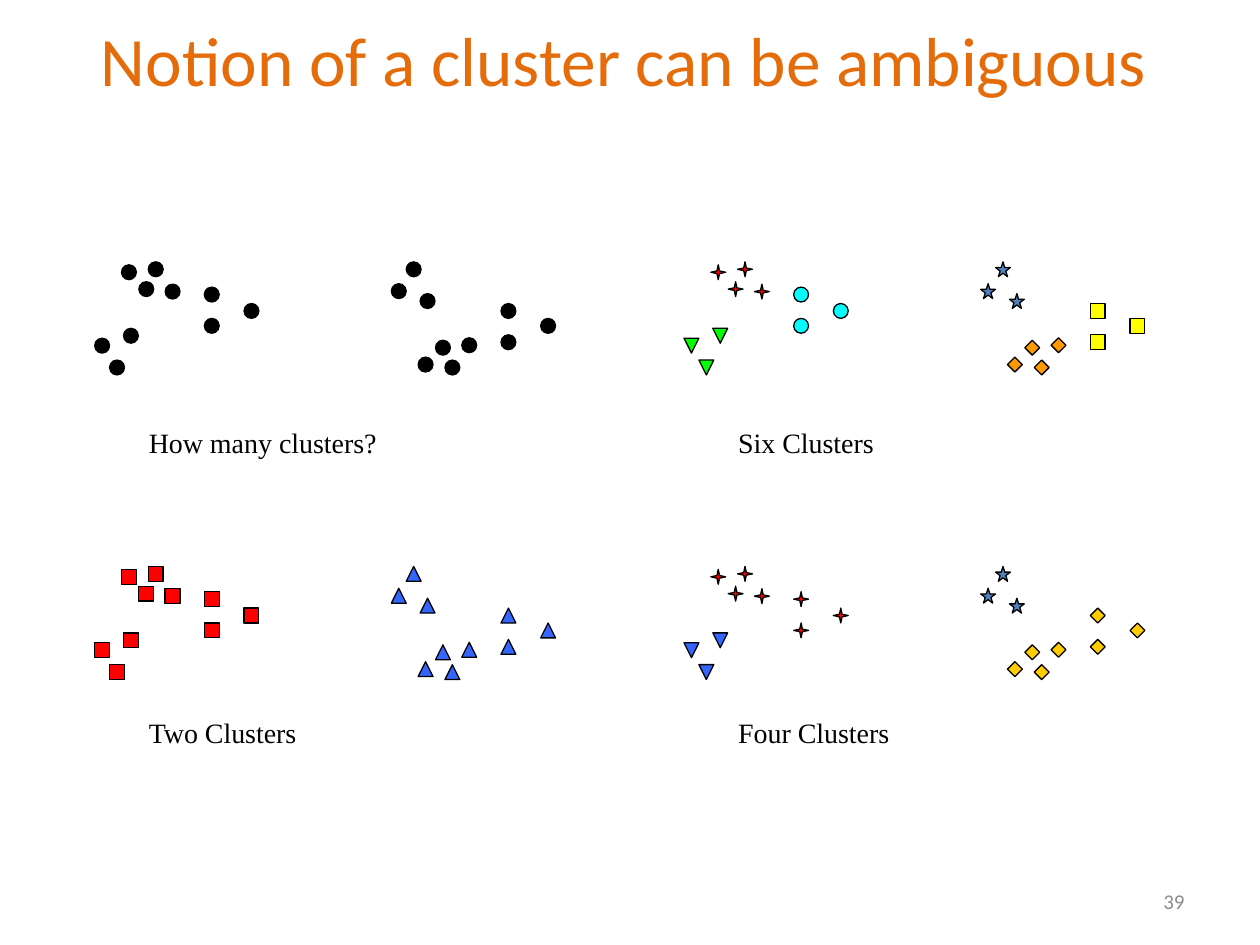
from pptx import Presentation
from pptx.dml.color import RGBColor
from pptx.enum import shapes, text
from pptx.util import Cm, Pt

BLACK = RGBColor(0x00, 0x00, 0x00)
RED = RGBColor(0xFF, 0x00, 0x00)
BLUE = RGBColor(0x33, 0x66, 0xFF)
STEEL = RGBColor(0x4F, 0x81, 0xBD)
GREEN = RGBColor(0x00, 0xFF, 0x00)
CYAN = RGBColor(0x00, 0xFF, 0xFF)
YELLOW = RGBColor(0xFF, 0xFF, 0x00)
GOLD = RGBColor(0xFF, 0xCC, 0x00)
AMBER = RGBColor(0xFF, 0x99, 0x00)
TITLE_ORANGE = RGBColor(0xE4, 0x6C, 0x0A)
GREY = RGBColor(0x8C, 0x8C, 0x8C)

MSO = shapes.MSO_SHAPE
DOT = (MSO.OVAL, BLACK)
RED_SQUARE = (MSO.RECTANGLE, RED)
BLUE_TRIANGLE = (MSO.ISOSCELES_TRIANGLE, BLUE)
RED_CROSS = (MSO.STAR_4_POINT, RED)
STEEL_STAR = (MSO.STAR_5_POINT, STEEL)
GOLD_DIAMOND = (MSO.DIAMOND, GOLD)

MARK = 0.3
CLOUD_HEIGHT = 1.98
CLOUD_SHIFT = 5.98
UPPER = [(1.42, 0.45), (0.54, 0.06), (1.08, 0), (0.89, 0.4)]
LOWER = [(0.58, 1.34), (0, 1.54), (0.3, CLOUD_HEIGHT)]
SIDE = [(2.21, 0.51), (3.01, 0.84), (2.21, 1.14)]
CLUSTERS = [UPPER, LOWER, SIDE]

COLUMNS = [1.91, 13.79]
ROWS = [5.28, 11.42]
CAPTION_TOPS = [8.46, 14.3]
PANELS = [
    (0, 0, "How many clusters?", [DOT] * 3, [DOT] * 3),
    (1, 1, "Four Clusters",
     [RED_CROSS, (MSO.FLOWCHART_EXTRACT, BLUE), RED_CROSS],
     [GOLD_DIAMOND, STEEL_STAR, GOLD_DIAMOND]),
    (0, 1, "Two Clusters", [RED_SQUARE] * 3, [BLUE_TRIANGLE] * 3),
    (1, 0, "Six Clusters",
     [RED_CROSS, (MSO.ISOSCELES_TRIANGLE, GREEN), (MSO.OVAL, CYAN)],
     [(MSO.DIAMOND, AMBER), STEEL_STAR, (MSO.RECTANGLE, YELLOW)]),
]


def add_text(parent, left, top, width, height, words, font, size, color,
             align=text.PP_ALIGN.LEFT, anchor=text.MSO_ANCHOR.TOP):
    sp = parent.add_textbox(Cm(left), Cm(top), Cm(width), Cm(height))
    tf = sp.text_frame
    tf.word_wrap = True
    tf.vertical_anchor = anchor
    p = tf.paragraphs[0]
    p.text = words
    p.alignment = align
    p.font.name = font
    p.font.size = Pt(size)
    p.font.color.rgb = color


def add_mark(parent, left, top, kind, color, flipped):
    sp = parent.add_shape(kind, Cm(left), Cm(top), Cm(MARK), Cm(MARK))
    sp.shadow.inherit = False
    sp.fill.solid()
    sp.fill.fore_color.rgb = color
    sp.line.color.rgb = BLACK
    sp.line.width = Pt(0.75)
    if kind == MSO.STAR_4_POINT:
        sp.adjustments[0] = 0.125
    if flipped:
        sp._element.spPr.get_or_add_xfrm().set("flipV", "1")


def add_cloud(parent, left, top, styles, flipped):
    for points, (kind, color) in zip(CLUSTERS, styles):
        for x, y in points:
            dy = y if flipped else CLOUD_HEIGHT - y
            add_mark(parent, left + x, top + dy, kind, color, flipped)


def add_panel(slide, left, top, caption_top, caption, left_styles, right_styles):
    group = slide.shapes.add_group_shape().shapes
    add_cloud(group, left + CLOUD_SHIFT, top, right_styles, False)
    add_cloud(group, left, top, left_styles, True)
    add_text(group, left + 0.84, caption_top, 6.35, 0.94, caption,
             "Times New Roman", 16, BLACK)


def main():
    prs = Presentation()
    prs.slide_width, prs.slide_height = Cm(25.4), Cm(19.05)
    slide = prs.slides.add_slide(prs.slide_layouts[6])
    add_text(slide.shapes, 1.07, 0.43, 23.01, 1.52,
             "Notion of a cluster can be ambiguous", "Calibri", 39.6,
             TITLE_ORANGE, text.PP_ALIGN.CENTER, text.MSO_ANCHOR.MIDDLE)
    for column, row, caption, left_styles, right_styles in PANELS:
        add_panel(slide, COLUMNS[column], ROWS[row], CAPTION_TOPS[row],
                  caption, left_styles, right_styles)
    add_text(slide.shapes, 18.2, 17.66, 5.93, 1.01, "39", "Calibri", 12,
             GREY, text.PP_ALIGN.RIGHT, text.MSO_ANCHOR.MIDDLE)
    prs.save("out.pptx")


if __name__ == "__main__":
    main()
